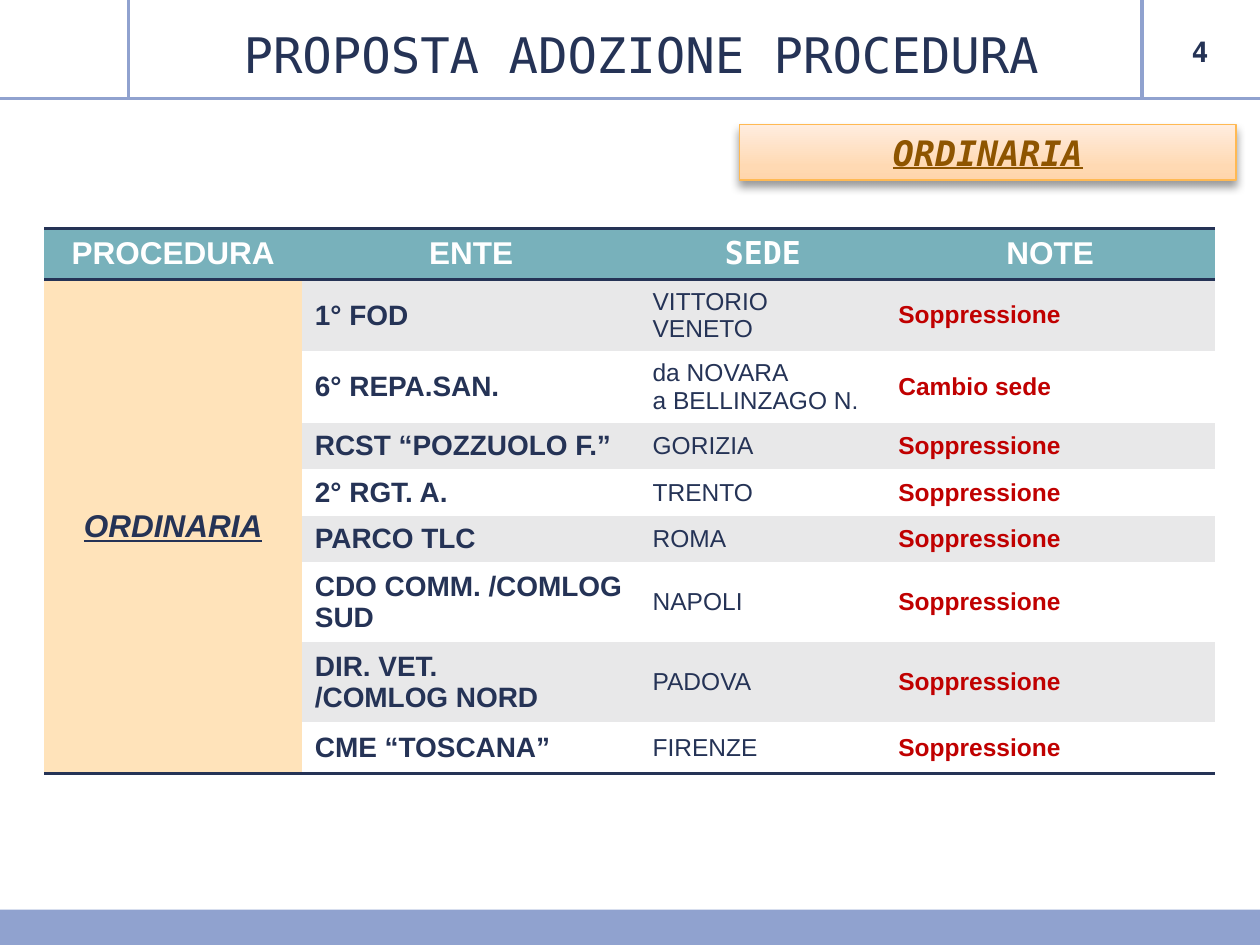
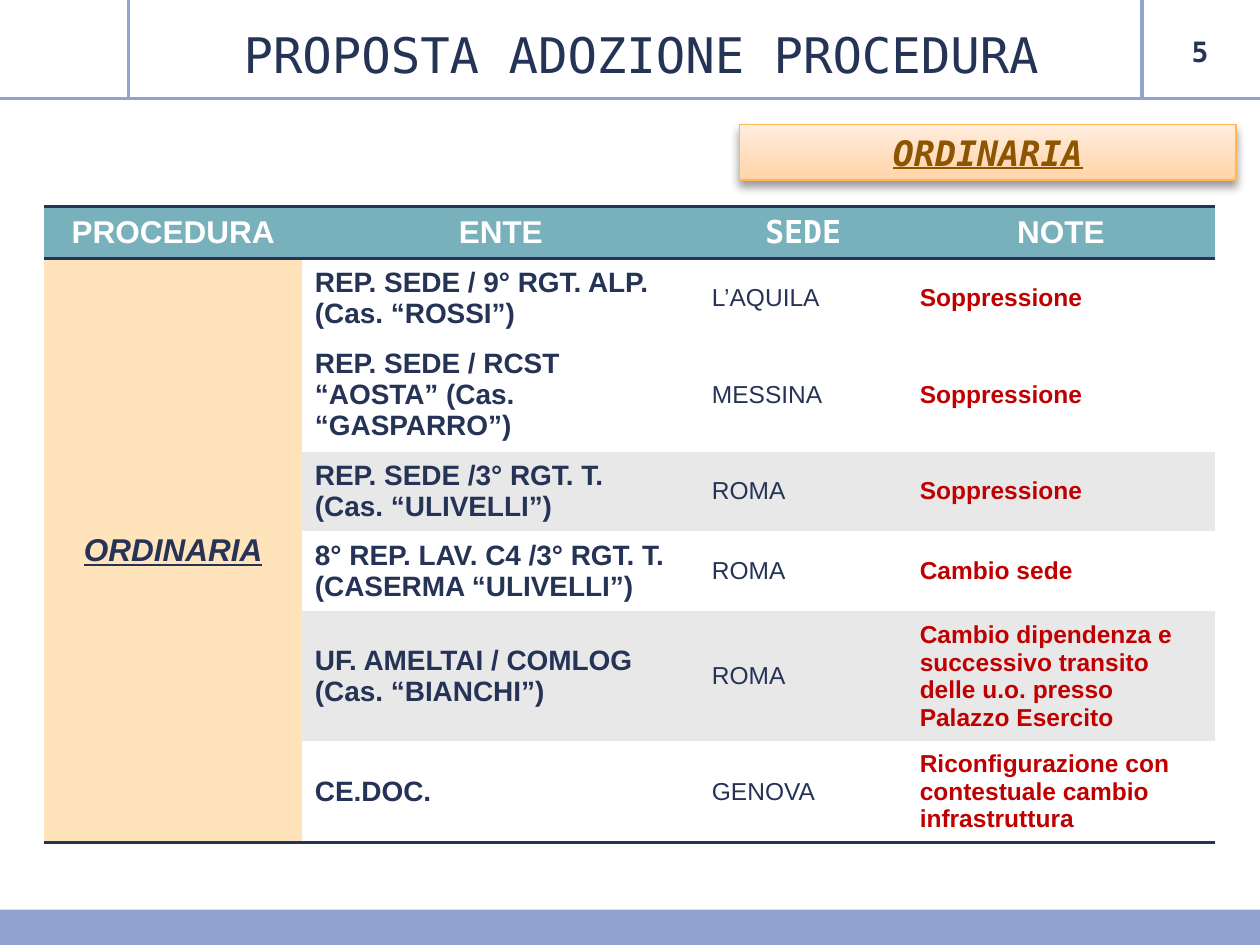
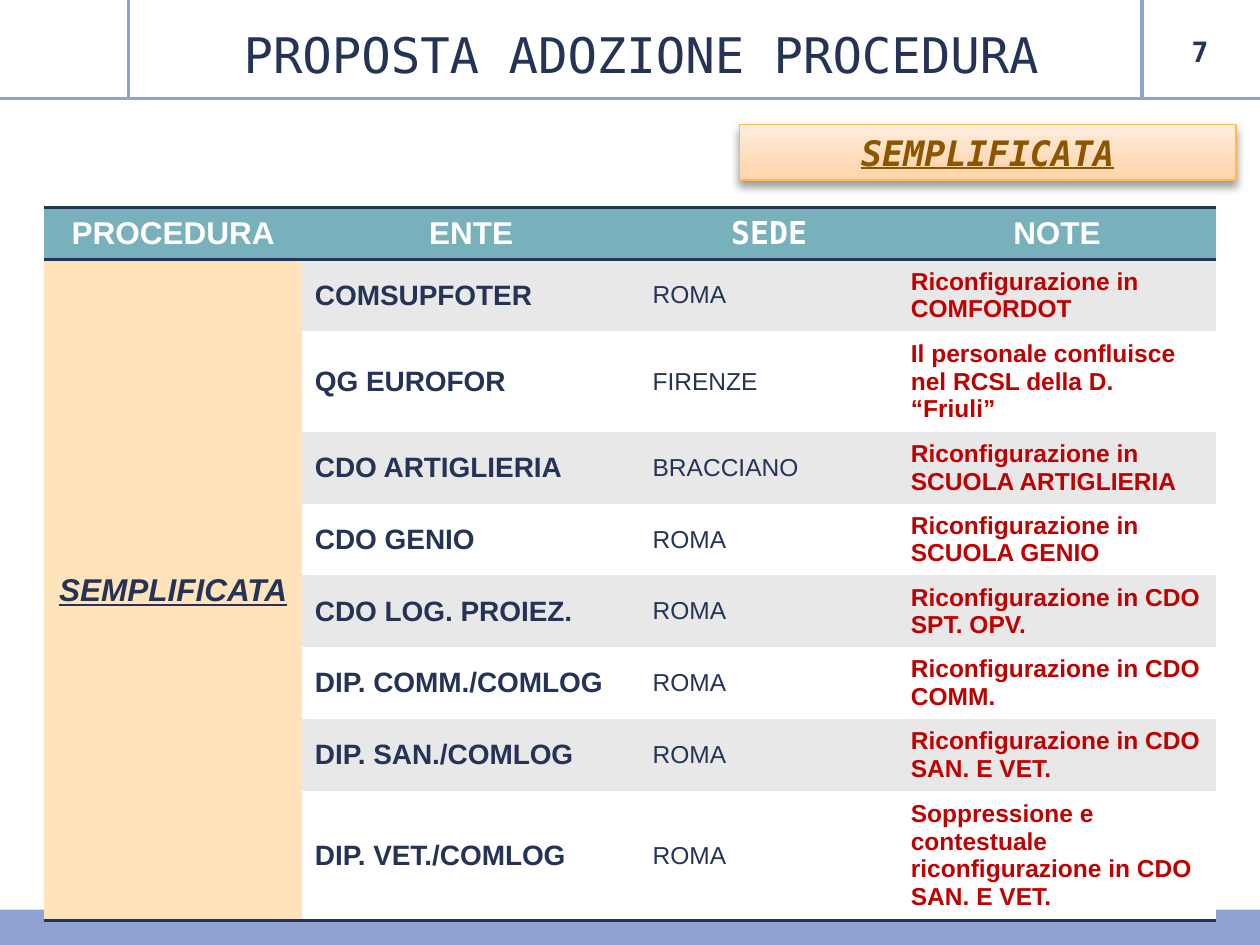
"""Build three slides that list the bodies subject to each adoption procedure."""
import lxml.etree
import pptx
import pptx.dml.color
import pptx.enum.shapes
import pptx.enum.text
import pptx.oxml.ns
import pptx.util

Inches = pptx.util.Inches
Pt = pptx.util.Pt
RGBColor = pptx.dml.color.RGBColor
ALIGN = pptx.enum.text.PP_ALIGN
MIDDLE = pptx.enum.text.MSO_ANCHOR.MIDDLE

NAVY = RGBColor(0x25, 0x33, 0x56)
PERIWINKLE = RGBColor(0x90, 0xA2, 0xCF)
TEAL = RGBColor(0x78, 0xB1, 0xBB)
CREAM = RGBColor(0xFF, 0xE3, 0xBA)
GREY = RGBColor(0xE8, 0xE8, 0xE9)
WHITE = RGBColor(0xFF, 0xFF, 0xFF)
RED = RGBColor(0xC0, 0x00, 0x00)
BROWN = RGBColor(0x8E, 0x55, 0x00)
ORANGE = RGBColor(0xFF, 0xB9, 0x53)
BADGE_STOPS = [
    (0, RGBColor(0xFF, 0xD5, 0xAB)),
    (25, RGBColor(0xFF, 0xD9, 0xB3)),
    (100, RGBColor(0xFF, 0xED, 0xDF)),
]

SANS = "Arial"
MONO = "DejaVu Sans Mono"
TITLE = "PROPOSTA ADOZIONE PROCEDURA"
HEADERS = ["PROCEDURA", "ENTE", "SEDE", "NOTE"]
PLAIN_TABLE_STYLE = "{2D5ABB26-0587-4C30-8999-92F81FD0307C}"
RULES = [
    ((9.06, 0), (9.06, 0.78), 2.25),
    ((0, 0.78), (10, 0.78), 1.75),
    ((1.02, 0), (1.02, 0.78), 2.25),
]

PAGES = [
    {
        "number": "4",
        "procedure": "ORDINARIA",
        "top": 1.81,
        "columns": [2.05, 2.68, 1.95, 2.61],
        "heights": [0.41, 0.56, 0.56, 0.37, 0.37, 0.37, 0.63, 0.63, 0.41],
        "first_fills": [GREY, WHITE],
        "rows": [
            ("1° FOD", "VITTORIO VENETO", "Soppressione"),
            ("6° REPA.SAN.", "da NOVARA\na BELLINZAGO N.", "Cambio sede"),
            ("RCST “POZZUOLO F.”", "GORIZIA", "Soppressione"),
            ("2° RGT. A.", "TRENTO", "Soppressione"),
            ("PARCO TLC", "ROMA", "Soppressione"),
            ("CDO COMM. /COMLOG SUD", "NAPOLI", "Soppressione"),
            ("DIR. VET.\n/COMLOG NORD", "PADOVA", "Soppressione"),
            ("CME “TOSCANA”", "FIRENZE", "Soppressione"),
        ],
    },
    {
        "number": "5",
        "procedure": "ORDINARIA",
        "top": 1.64,
        "columns": [2.05, 3.15, 1.65, 2.44],
        "heights": [0.41, 0.63, 0.9, 0.63, 0.63, 1.03, 0.8],
        "first_fills": [WHITE, WHITE],
        "rows": [
            ("REP. SEDE / 9° RGT. ALP.\n(Cas. “ROSSI”)", "L’AQUILA", "Soppressione"),
            ("REP. SEDE / RCST “AOSTA” (Cas. “GASPARRO”)", "MESSINA", "Soppressione"),
            ("REP. SEDE /3° RGT. T.\n(Cas. “ULIVELLI”)", "ROMA", "Soppressione"),
            ("8° REP. LAV. C4 /3° RGT. T.\n(CASERMA “ULIVELLI”)", "ROMA", "Cambio sede"),
            ("UF. AMELTAI / COMLOG (Cas. “BIANCHI”)", "ROMA",
             "Cambio dipendenza e successivo transito delle u.o. presso Palazzo Esercito"),
            ("CE.DOC.", "GENOVA", "Riconfigurazione con contestuale cambio infrastruttura"),
        ],
    },
    {
        "number": "7",
        "procedure": "SEMPLIFICATA",
        "top": 1.65,
        "columns": [2.05, 2.68, 2.05, 2.52],
        "heights": [0.41, 0.57, 0.8, 0.56, 0.57, 0.57, 0.57, 0.56, 1.03],
        "first_fills": [GREY, WHITE],
        "rows": [
            ("COMSUPFOTER", "ROMA", "Riconfigurazione in COMFORDOT"),
            ("QG EUROFOR", "FIRENZE", "Il personale confluisce nel RCSL della D. “Friuli”"),
            ("CDO ARTIGLIERIA", "BRACCIANO", "Riconfigurazione in SCUOLA ARTIGLIERIA"),
            ("CDO GENIO", "ROMA", "Riconfigurazione in SCUOLA GENIO"),
            ("CDO LOG. PROIEZ.", "ROMA", "Riconfigurazione in CDO SPT. OPV."),
            ("DIP. COMM./COMLOG", "ROMA", "Riconfigurazione in CDO COMM."),
            ("DIP. SAN./COMLOG", "ROMA", "Riconfigurazione in CDO SAN. E VET."),
            ("DIP. VET./COMLOG", "ROMA",
             "Soppressione e contestuale riconfigurazione in CDO SAN. E VET."),
        ],
    },
]


def add_element(parent, tag, **attributes):
    """Append a DrawingML child element and return it."""
    element = lxml.etree.SubElement(parent, pptx.oxml.ns.qn(tag))
    for name, value in attributes.items():
        element.set(name, str(value))
    return element


def write(frame, text, size, color, font=SANS, bold=False, emphasis=False, align=ALIGN.CENTER):
    """Fill a text frame with uniformly formatted paragraphs."""
    frame.text = text
    frame.word_wrap = True
    for paragraph in frame.paragraphs:
        paragraph.alignment = align
        for run in paragraph.runs:
            run.font.size = Pt(size)
            run.font.name = font
            run.font.color.rgb = color
            run.font.bold = bold
            run.font.italic = emphasis
            run.font.underline = emphasis


def add_label(slide, box, text, size, bold=False):
    """Add a centred navy text box in the heading font."""
    frame = slide.shapes.add_textbox(*map(Inches, box)).text_frame
    write(frame, text, size, NAVY, MONO, bold)
    frame.vertical_anchor = MIDDLE


def add_rectangle(slide, box):
    """Add a rectangle without the theme shadow."""
    shape = slide.shapes.add_shape(
        pptx.enum.shapes.MSO_SHAPE.RECTANGLE, *map(Inches, box))
    shape.shadow.inherit = False
    return shape


def add_frame(slide, number):
    """Draw the footer band, header rules, page number and title."""
    footer = add_rectangle(slide, (0, 7.22, 10.02, 0.28))
    footer.fill.solid()
    footer.fill.fore_color.rgb = PERIWINKLE
    footer.line.fill.background()
    for start, end, width in RULES:
        rule = slide.shapes.add_connector(
            pptx.enum.shapes.MSO_CONNECTOR.STRAIGHT, *map(Inches, start + end))
        rule.line.color.rgb = PERIWINKLE
        rule.line.width = Pt(width)
        add_element(rule._element.spPr, "a:effectLst")
    add_label(slide, (9.17, 0.13, 0.71, 0.55), number, 16, bold=True)
    add_label(slide, (1.22, 0.22, 7.74, 0.41), TITLE, 28)


def add_badge(slide, procedure):
    """Add the shaded badge that names the procedure."""
    badge = add_rectangle(slide, (5.87, 0.99, 3.94, 0.44))
    badge.line.color.rgb = ORANGE
    badge.line.width = Pt(0.75)
    badge.fill.gradient()
    badge.fill.gradient_angle = 90
    properties = badge._element.spPr
    stops = properties.find(".//" + pptx.oxml.ns.qn("a:gsLst"))
    for stop in list(stops):
        stops.remove(stop)
    for position, color in BADGE_STOPS:
        stop = add_element(stops, "a:gs", pos=position * 1000)
        add_element(stop, "a:srgbClr", val=color)
    effects = properties.find(pptx.oxml.ns.qn("a:effectLst"))
    shadow = add_element(effects, "a:outerShdw", blurRad=Pt(5.2), dist=Pt(3),
                         dir=5400000, rotWithShape=0)
    shadow_color = add_element(shadow, "a:srgbClr", val="000000")
    add_element(shadow_color, "a:alpha", val=40000)
    write(badge.text_frame, procedure, 20, BROWN, MONO, bold=True, emphasis=True)
    badge.text_frame.auto_size = pptx.enum.text.MSO_AUTO_SIZE.SHAPE_TO_FIT_TEXT


def style_cell(cell, fill, *borders):
    """Set the fill, anchor and navy borders of a cell."""
    cell.vertical_anchor = MIDDLE
    properties = cell._tc.get_or_add_tcPr()
    for border in borders:
        line = add_element(properties, border, w=Pt(2))
        add_element(add_element(line, "a:solidFill"), "a:srgbClr", val=NAVY)
    cell.fill.solid()
    cell.fill.fore_color.rgb = fill


def add_procedure_table(slide, page):
    """Add the table of bodies, seats and notes."""
    columns, heights, rows = page["columns"], page["heights"], page["rows"]
    table_frame = slide.shapes.add_table(
        len(heights), len(columns), Inches(0.35), Inches(page["top"]),
        Inches(sum(columns)), Inches(sum(heights)))
    table = table_frame.table
    table.first_row = False
    table.horz_banding = False
    table._tbl.tblPr.find(pptx.oxml.ns.qn("a:tableStyleId")).text = PLAIN_TABLE_STYLE
    for column, width in zip(table.columns, columns):
        column.width = Inches(width)
    for row, height in zip(table.rows, heights):
        row.height = Inches(height)

    for index, header in enumerate(HEADERS):
        cell = table.cell(0, index)
        write(cell.text_frame, header, 18, WHITE, MONO if header == "SEDE" else SANS, bold=True)
        style_cell(cell, TEAL, "a:lnT", "a:lnB")

    last = len(rows)
    formats = [(16, NAVY, True), (14, NAVY, False), (14, RED, True)]
    fills = page["first_fills"] + [GREY, WHITE] * last
    for row_index, (texts, fill) in enumerate(zip(rows, fills), start=1):
        borders = ["a:lnB"] if row_index == last else []
        style_cell(table.cell(row_index, 0), CREAM,
                   *(["a:lnB"] if row_index in (1, last) else []))
        for column_index, (text, (size, color, bold)) in enumerate(zip(texts, formats), start=1):
            cell = table.cell(row_index, column_index)
            write(cell.text_frame, text, size, color, bold=bold, align=ALIGN.LEFT)
            style_cell(cell, fill, *borders)
    procedure_cell = table.cell(1, 0)
    procedure_cell.merge(table.cell(last, 0))
    write(procedure_cell.text_frame, page["procedure"], 18, NAVY, bold=True, emphasis=True)


def main():
    """Build and save the presentation."""
    presentation = pptx.Presentation()
    presentation.slide_width = Inches(10)
    presentation.slide_height = Inches(7.5)
    for page in PAGES:
        slide = presentation.slides.add_slide(presentation.slide_layouts[6])
        add_frame(slide, page["number"])
        add_badge(slide, page["procedure"])
        add_procedure_table(slide, page)
    presentation.save("out.pptx")


if __name__ == "__main__":
    main()
